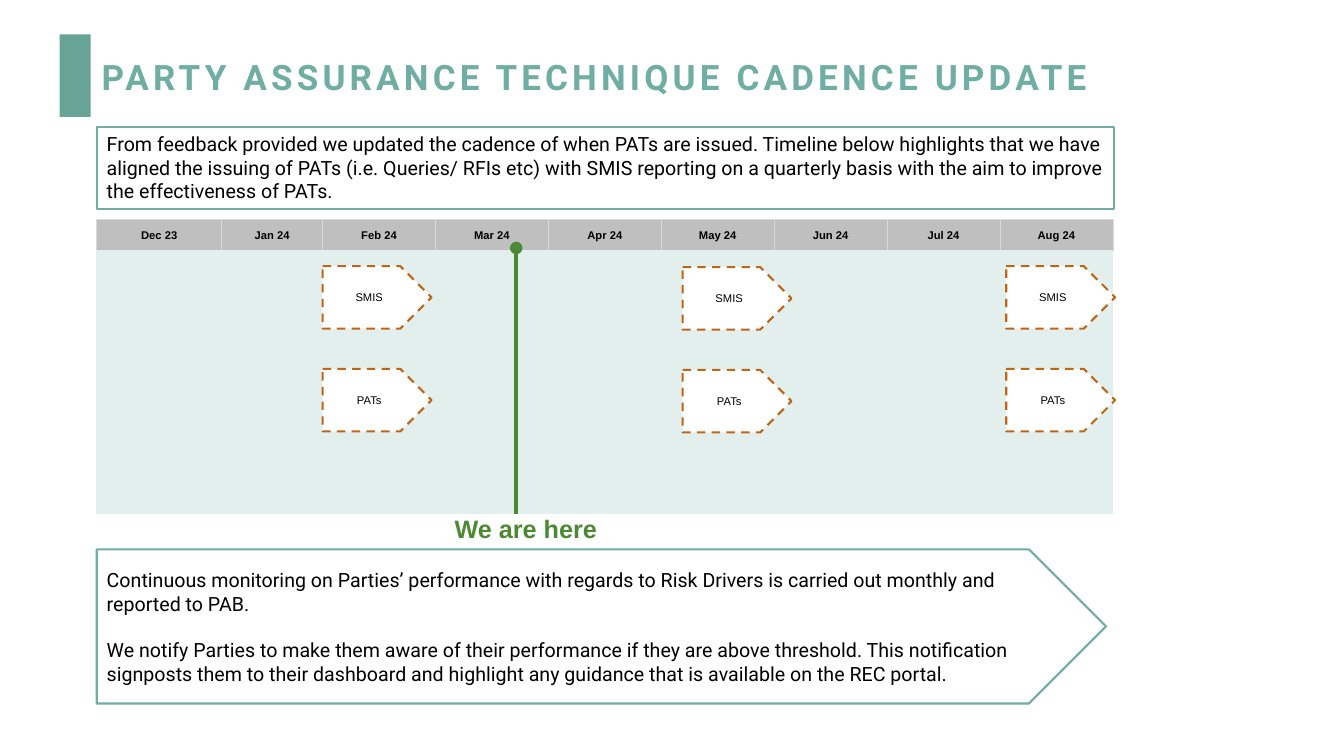
"""Build the Party Assurance Technique cadence slide."""
import dataclasses
import typing

import lxml.etree
import pptx
import pptx.dml.color
import pptx.enum.dml
import pptx.enum.shapes
import pptx.enum.text
import pptx.oxml.ns
import pptx.util

Inches = pptx.util.Inches
Pt = pptx.util.Pt
SHAPES = pptx.enum.shapes.MSO_SHAPE
ANCHOR = pptx.enum.text.MSO_ANCHOR
ALIGN = pptx.enum.text.PP_ALIGN
DASH = pptx.enum.dml.MSO_LINE.DASH

COLORS = {
    "accent": "68A495",
    "teal": "70ADA3",
    "white": "FFFFFF",
    "black": "000000",
    "header": "BFBFBF",
    "header_line": "D9D9D9",
    "body": "E2EFED",
    "orange": "BE6516",
    "green": "4D8934",
}
MONTHS = ["Dec 23", "Jan 24", "Feb 24", "Mar 24", "Apr 24", "May 24", "Jun 24", "Jul 24", "Aug 24"]
COLUMN_WIDTHS = [1.24, 1.0] + [1.12] * 7
ROW_HEIGHTS = [0.31, 0.77, 1.83]
FEEDBACK = (
    "From feedback provided we updated the cadence of when PATs are issued. Timeline below highlights "
    "that we have aligned the issuing of PATs (i.e. Queries/ RFIs etc) with SMIS reporting on a quarterly "
    "basis with the aim to improve the effectiveness of PATs."
)
MONITORING = [
    "Continuous monitoring on Parties’ performance with regards to Risk Drivers is carried out monthly "
    "and reported to PAB.",
    "We notify Parties to make them aware of their performance if they are above threshold. This "
    "notification signposts them to their dashboard and highlight any guidance that is available on "
    "the REC portal.",
]


@dataclasses.dataclass
class TextStyle:
    size: float
    name: str = "Arial"
    color: str = "black"
    bold: bool = False
    align: typing.Any = ALIGN.LEFT
    gap: float = 0
    line_spacing: float = 1.0
    tracking: float = 0


@dataclasses.dataclass
class Panel:
    left: float
    top: float
    width: float
    height: float
    kind: typing.Any = None
    fill: str = "white"
    line: typing.Optional[str] = None
    dash: typing.Any = None
    anchor: typing.Any = ANCHOR.MIDDLE
    paragraphs: typing.Sequence[str] = ()
    style: typing.Optional[TextStyle] = None


TITLE = TextStyle(25, "Roboto", "teal", bold=True, line_spacing=0.9, tracking=3)
PROSE = TextStyle(14, "Roboto", gap=16.4)
LABEL = TextStyle(8, align=ALIGN.CENTER)
MONTH = TextStyle(8, bold=True, align=ALIGN.CENTER)
MARKER = TextStyle(18, color="green", bold=True)


def rgb(name: str) -> pptx.dml.color.RGBColor:
    """Return a palette colour."""
    return pptx.dml.color.RGBColor.from_string(COLORS[name])


def write(frame, paragraphs: typing.Sequence[str], style: TextStyle) -> None:
    """Write styled paragraphs into a text frame."""
    for index, text in enumerate(paragraphs):
        para = frame.add_paragraph() if index else frame.paragraphs[0]
        layout = {
            "alignment": style.align,
            "line_spacing": style.line_spacing,
            "space_before": Pt(style.gap if index else 0),
        }
        for key, value in layout.items():
            setattr(para, key, value)
        span = para.add_run()
        span.text = text
        for key, value in {"name": style.name, "size": Pt(style.size), "bold": style.bold}.items():
            setattr(span.font, key, value)
        span.font.color.rgb = rgb(style.color)
        if style.tracking:
            span._r.get_or_add_rPr().set("spc", str(round(style.tracking * 100)))


def draw_panel(page, panel: Panel) -> None:
    """Draw a preset shape, or a text box when the panel has no kind."""
    area = [Inches(value) for value in (panel.left, panel.top, panel.width, panel.height)]
    if panel.kind is None:
        box = page.shapes.add_textbox(*area)
    else:
        box = page.shapes.add_shape(panel.kind, *area)
        box.shadow.inherit = False
        box.fill.solid()
        box.fill.fore_color.rgb = rgb(panel.fill)
        if panel.line:
            box.line.color.rgb = rgb(panel.line)
            box.line.width = Pt(1.5)
            if panel.dash:
                box.line.dash_style = panel.dash
        else:
            box.line.fill.background()
    if panel.style:
        box.text_frame.word_wrap = True
        box.text_frame.vertical_anchor = panel.anchor
        write(box.text_frame, panel.paragraphs, panel.style)


def style_cell(cell, fill: str, edge: str, width: float) -> None:
    """Set the borders, fill and margins of a cell."""
    properties = cell._tc.get_or_add_tcPr()
    for side in "LRTB":
        border = lxml.etree.SubElement(
            properties, pptx.oxml.ns.qn(f"a:ln{side}"), w=str(Pt(width))
        )
        solid = lxml.etree.SubElement(border, pptx.oxml.ns.qn("a:solidFill"))
        color = COLORS["body"] if side == "B" else COLORS[edge]
        lxml.etree.SubElement(solid, pptx.oxml.ns.qn("a:srgbClr"), val=color)
    cell.fill.solid()
    cell.fill.fore_color.rgb = rgb(fill)
    cell.vertical_anchor = ANCHOR.MIDDLE
    for side in ("left", "top", "right", "bottom"):
        setattr(cell, f"margin_{side}", 0)


def draw_timeline(page) -> None:
    """Draw the month table."""
    table = page.shapes.add_table(
        len(ROW_HEIGHTS), len(MONTHS), Inches(0.96), Inches(2.18),
        Inches(sum(COLUMN_WIDTHS)), Inches(sum(ROW_HEIGHTS)),
    ).table
    table.horz_banding = False
    for row, height in zip(table.rows, ROW_HEIGHTS):
        row.height = Inches(height)
    for index, (month, width) in enumerate(zip(MONTHS, COLUMN_WIDTHS)):
        table.columns[index].width = Inches(width)
        style_cell(table.cell(0, index), "header", "header_line", 0.5)
        write(table.cell(0, index).text_frame, [month], MONTH)
        for row in range(1, len(ROW_HEIGHTS)):
            style_cell(table.cell(row, index), "body", "body", 1)


def draw_today_line(page) -> None:
    """Draw the current-date line with a round head."""
    line = page.shapes.add_connector(
        pptx.enum.shapes.MSO_CONNECTOR.STRAIGHT, Inches(5.12), Inches(2.46), Inches(5.12), Inches(5.1)
    )
    line.line.color.rgb = rgb("green")
    line.line.width = Pt(3)
    lxml.etree.SubElement(line.line._get_or_add_ln(), pptx.oxml.ns.qn("a:headEnd"), type="oval")
    lxml.etree.SubElement(line._element.spPr, pptx.oxml.ns.qn("a:effectLst"))


def main() -> None:
    """Build and save the deck."""
    deck = pptx.Presentation()
    deck.slide_width, deck.slide_height = Inches(13.33), Inches(7.5)
    page = deck.slides.add_slide(deck.slide_layouts[6])
    draw_panel(page, Panel(0.59, 0.34, 0.31, 0.82, SHAPES.RECTANGLE, "accent"))
    draw_panel(page, Panel(0.91, 0.43, 10.15, 0.72, style=TITLE,
                           paragraphs=["PARTY ASSURANCE TECHNIQUE CADENCE UPDATE"]))
    draw_timeline(page)
    draw_panel(page, Panel(0.96, 5.45, 10.01, 1.53, SHAPES.PENTAGON, line="teal",
                           paragraphs=MONITORING, style=PROSE))
    draw_panel(page, Panel(0.96, 1.26, 10.09, 0.81, SHAPES.RECTANGLE, line="teal",
                           anchor=ANCHOR.TOP, paragraphs=[FEEDBACK], style=PROSE))
    for left, top in ((3.2, 2.64), (6.77, 2.65), (9.98, 2.64)):
        for step, label in enumerate(("SMIS", "PATs")):
            draw_panel(page, Panel(left, top + step * 1.02, 1.08, 0.62, SHAPES.PENTAGON,
                                   line="orange", dash=DASH, paragraphs=[label], style=LABEL))
    draw_today_line(page)
    draw_panel(page, Panel(4.41, 5.04, 1.77, 0.4, anchor=ANCHOR.TOP,
                           paragraphs=["We are here"], style=MARKER))
    deck.save("out.pptx")


if __name__ == "__main__":
    main()
